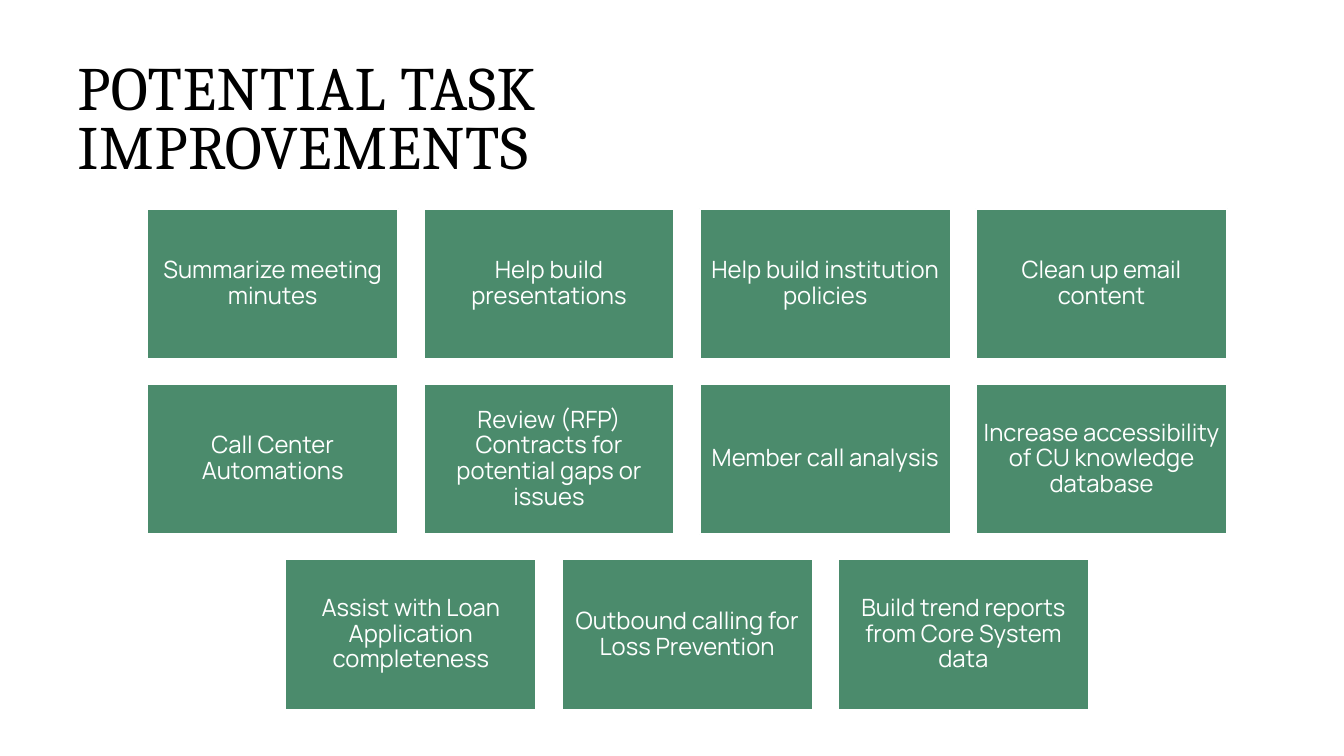
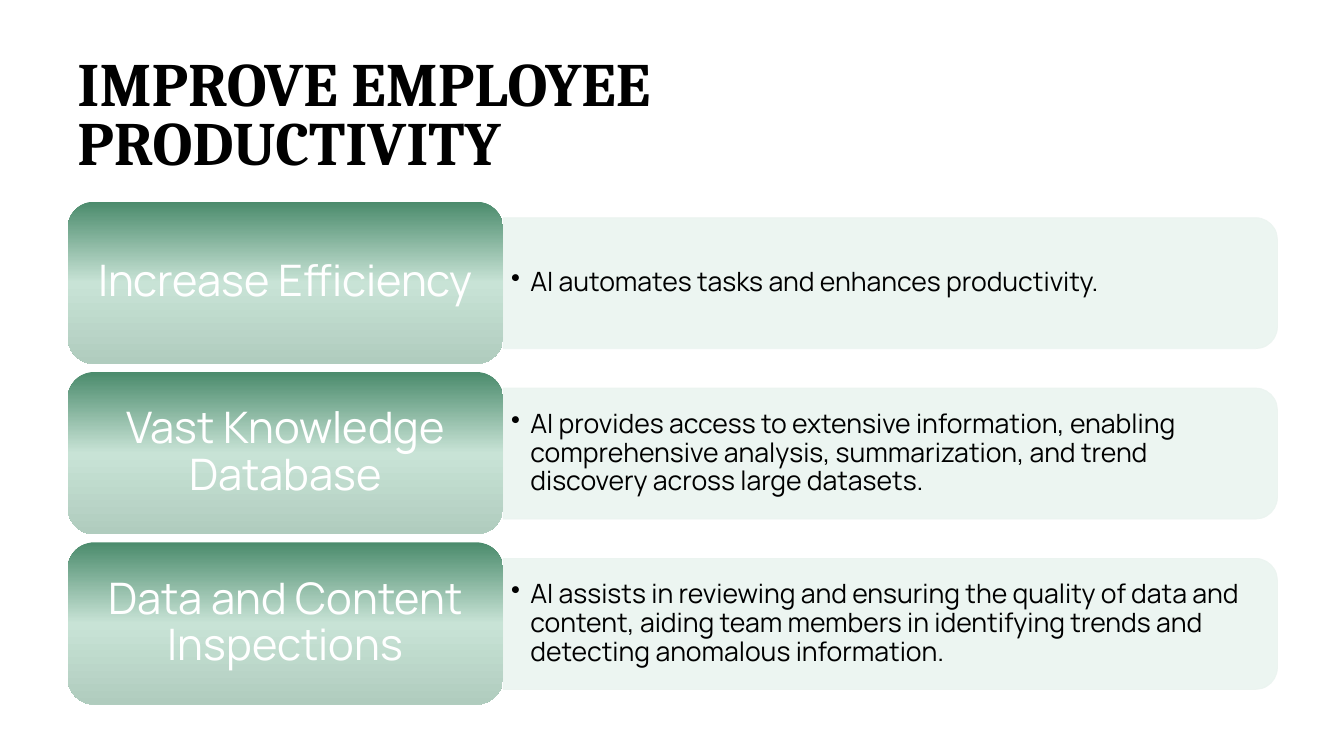
from lxml import etree
from pptx import Presentation
from pptx.dml.color import RGBColor
from pptx.enum.shapes import MSO_SHAPE
from pptx.enum.text import MSO_ANCHOR, PP_ALIGN
from pptx.oxml import parse_xml
from pptx.oxml.ns import nsdecls, qn
from pptx.util import Emu, Pt

RECT = MSO_SHAPE.RECTANGLE
ROUND = MSO_SHAPE.ROUNDED_RECTANGLE
ROUND_TOP = MSO_SHAPE.ROUND_2_SAME_RECTANGLE
LEFT, CENTER = PP_ALIGN.LEFT, PP_ALIGN.CENTER
MIDDLE, BOTTOM = MSO_ANCHOR.MIDDLE, MSO_ANCHOR.BOTTOM

PX = 9144
COLORS = {
    "green": "4B8B6C",
    "mint": "C8E3D6",
    "sage": "B0CCBE",
    "pale": "EBF4F0",
    "white": "FFFFFF",
    "black": "000000",
}
HEAD_FONT, BODY_FONT = "Cambria", "Manrope"

TASKS = [
    ["Summarize meeting minutes", "Help build presentations",
     "Help build institution policies", "Clean up email content"],
    ["Call Center Automations",
     "Review (RFP) Contracts for potential gaps or issues",
     "Member call analysis",
     "Increase accessibility of CU knowledge database"],
    ["Assist with Loan Application completeness",
     "Outbound calling for Loss Prevention",
     "Build trend reports from Core System data"],
]
BENEFITS = [
    ("Increase Efficiency",
     "AI automates tasks and enhances productivity."),
    ("Vast Knowledge Database",
     "AI provides access to extensive information, enabling comprehensive "
     "analysis, summarization, and trend discovery across large datasets."),
    ("Data and Content Inspections",
     "AI assists in reviewing and ensuring the quality of data and content, "
     "aiding team members in identifying trends and detecting anomalous "
     "information."),
]


def px(n):
    """Turn pixels into EMU."""
    return Emu(n * PX)


def rgb(name):
    """Look up a named colour."""
    return RGBColor.from_string(COLORS[name])


def write(sp, text, size, color="white", font=BODY_FONT, bold=False,
          align=CENTER, anchor=MIDDLE, inset=(7, 7), leading=0.9,
          bullet=0, tracking=0):
    """Put one formatted paragraph into a shape."""
    tf = sp.text_frame
    tf.word_wrap = True
    tf.vertical_anchor = anchor
    tf.margin_left = tf.margin_right = px(inset[0])
    tf.margin_top = tf.margin_bottom = px(inset[1])
    p = tf.paragraphs[0]
    p.text = text
    p.alignment = align
    p.line_spacing = leading
    if bullet:
        pPr = p._p.get_or_add_pPr()
        pPr.set("marL", str(px(bullet)))
        pPr.set("indent", str(-px(bullet)))
        etree.SubElement(pPr, qn("a:buChar")).set("char", "•")
    for r in p.runs:
        r.font.size = Pt(size)
        r.font.name = font
        r.font.bold = bold
        r.font.color.rgb = rgb(color)
        if tracking:
            r._r.get_or_add_rPr().set("spc", str(tracking))


class Deck:
    """Hold the presentation, its style and the current slide."""

    def __init__(self):
        """Start a widescreen presentation."""
        self.prs = Presentation()
        self.prs.slide_width, self.prs.slide_height = px(1333), px(750)
        self.s = None

    def slide(self, title, top, bold=False, tracking=0):
        """Add a blank slide with a title."""
        self.s = self.prs.slides.add_slide(self.prs.slide_layouts[6])
        write(self.box(67, top, 926, 170), title, 44, color="black",
              font=HEAD_FONT, bold=bold, align=LEFT, anchor=BOTTOM,
              inset=(10, 5), leading=0.8, tracking=tracking)

    def box(self, x, y, w, h):
        """Add an empty text box."""
        return self.s.shapes.add_textbox(px(x), px(y), px(w), px(h))

    def shape(self, kind, x, y, w, h, fill=None, line=None, weight=1):
        """Add a preset shape without a shadow."""
        sp = self.s.shapes.add_shape(kind, px(x), px(y), px(w), px(h))
        sp.shadow.inherit = False
        if fill:
            sp.fill.solid()
            sp.fill.fore_color.rgb = rgb(fill)
        if line:
            sp.line.color.rgb = rgb(line)
            sp.line.width = Pt(weight)
        else:
            sp.line.fill.background()
        return sp

    def tile(self, text, x, y, w, h):
        """Add a green task tile."""
        sp = self.shape(RECT, x, y, w, h, "green", "white", 1.5)
        write(sp, text, 17)

    def card(self, text, x, y, w, h):
        """Add a rounded card with a vertical gradient."""
        sp = self.shape(ROUND, x, y, w, h)
        stops = "".join(
            f'<a:gs pos="{pos}"><a:srgbClr val="{COLORS[c]}"/></a:gs>'
            for pos, c in ((0, "green"), (50000, "mint"), (100000, "sage")))
        grad = parse_xml(
            f'<a:gradFill {nsdecls("a")} rotWithShape="1"><a:gsLst>{stops}'
            '</a:gsLst><a:lin ang="5400000" scaled="0"/></a:gradFill>')
        sp._element.spPr.find(qn("a:prstGeom")).addnext(grad)
        write(sp, text, 31, inset=(21, 14))

    def bar(self, text, x, y, w, h):
        """Add a pale bar rounded on the right, with a bullet."""
        shift = (w - h) // 2
        sp = self.shape(ROUND_TOP, x + shift, y - shift, h, w,
                        "pale", "pale", 0.5)
        sp.rotation = 90
        for clr in sp._element.spPr.iter(qn("a:srgbClr")):
            etree.SubElement(clr, qn("a:alpha")).set("val", "90000")
        write(self.box(x, y + 6, w - 7, h - 12), text, 19, color="black",
              align=LEFT, inset=(8, 4), bullet=19)


def main():
    """Build and save both slides."""
    deck = Deck()

    deck.slide("POTENTIAL TASK\vIMPROVEMENTS", 15, tracking=50)
    pitch_x, pitch_y = 274, 174
    for i, row in enumerate(TASKS):
        left = 146 + (len(TASKS[0]) - len(row)) * pitch_x // 2
        for j, task in enumerate(row):
            deck.tile(task, left + j * pitch_x, 207 + i * pitch_y, 249, 149)

    deck.slide("IMPROVE EMPLOYEE\vPRODUCTIVITY", 11, bold=True)
    for i, (name, detail) in enumerate(BENEFITS):
        top = 200 + i * 169
        deck.bar(detail, 499, top + 16, 768, 130)
        deck.card(name, 67, top, 432, 161)

    deck.prs.save("out.pptx")


if __name__ == "__main__":
    main()
